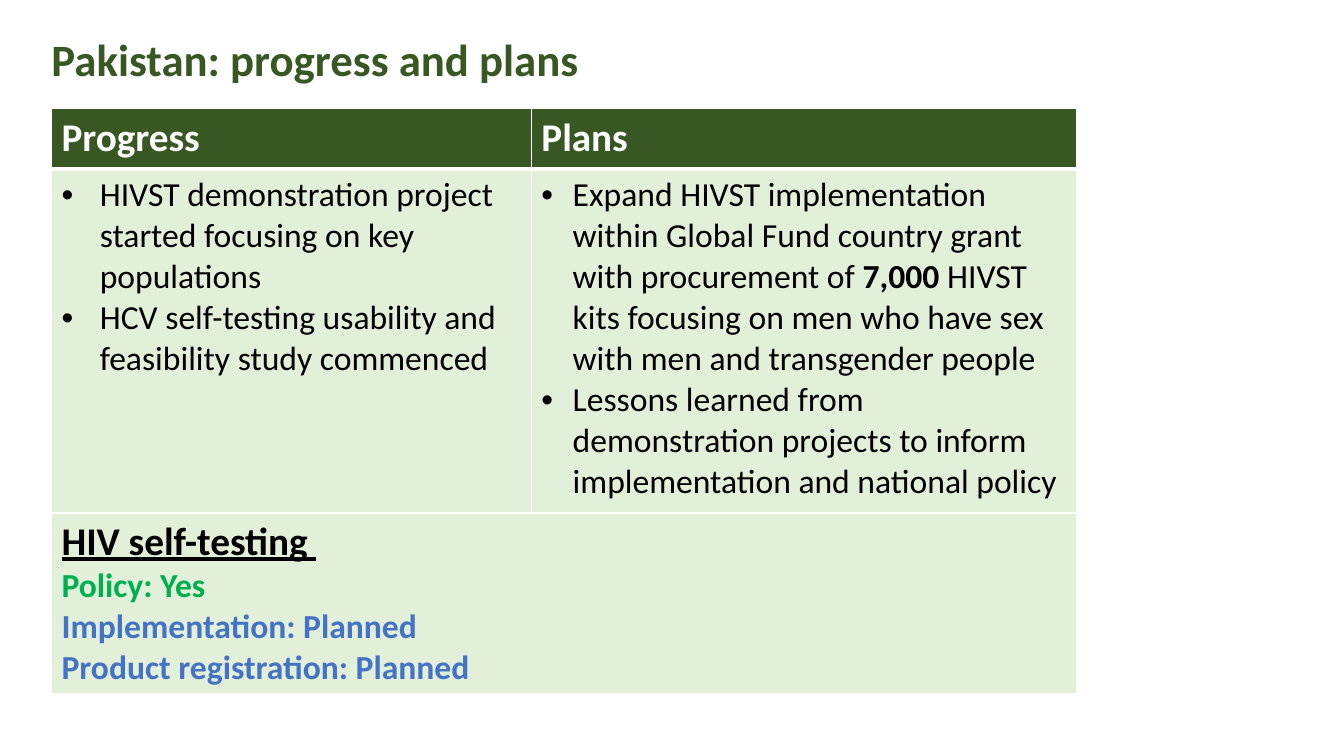
from dataclasses import dataclass

from lxml.etree import SubElement as Sub
from pptx import Presentation
from pptx.dml.color import RGBColor
from pptx.enum.text import MSO_ANCHOR as Anchor, MSO_AUTO_SIZE as Fit, PP_ALIGN as Align
from pptx.oxml.ns import qn
from pptx.util import Emu, Inches, Pt

WIDE, HIGH = Inches(13.33), Inches(7.5)
DARK, PALE, WHITE, BLACK = "385723", "E2F0D9", "FFFFFF", "000000"
GREEN, BLUE = "00B050", "4472C4"
COLS = (35.71, 40.59)
ROWS = (8, 45.47, 23.6)


@dataclass
class Run:
    text: str
    size: int = 24
    hue: str = BLACK
    bold: bool = False
    under: bool = False


@dataclass
class Para:
    runs: list[Run]
    hang: float = 0


@dataclass
class Cell:
    row: int
    col: int
    fill: str
    paras: list[Para]
    base: int = 1


def across(share: float) -> Emu:
    return Emu(round(WIDE * share / 100))


def down(share: float) -> Emu:
    return Emu(round(HIGH * share / 100))


def paint(target, hue: str) -> None:
    target.rgb = RGBColor.from_string(hue)


def place(shape, left: float, top: float, width: float, height: float) -> None:
    box = {"left": across(left), "top": down(top),
           "width": across(width), "height": down(height)}
    for key, value in box.items():
        setattr(shape, key, value)


def write(frame, paras: list[Para]) -> None:
    for i, para in enumerate(paras):
        line = frame.add_paragraph() if i else frame.paragraphs[0]
        line.alignment = Align.LEFT
        if para.hang:
            props = line._p.get_or_add_pPr()
            props.set("marL", str(Inches(para.hang)))
            props.set("indent", str(-Inches(para.hang)))
            Sub(props, qn("a:buFont"), typeface="Arial")
            Sub(props, qn("a:buChar"), char="•")
        for item in para.runs:
            run = line.add_run()
            run.text = item.text
            look = {"name": "Calibri", "size": Pt(item.size),
                    "bold": item.bold, "underline": item.under}
            for key, value in look.items():
                setattr(run.font, key, value)
            paint(run.font.color, item.hue)


def edge(cell, base: int) -> None:
    props = cell._tc.get_or_add_tcPr()
    for side, width in {"L": 1, "R": 1, "T": 1, "B": base}.items():
        line = Sub(props, qn(f"a:ln{side}"), w=str(Pt(width)))
        Sub(Sub(line, qn("a:solidFill")), qn("a:srgbClr"), val=WHITE)


def draw(table, item: Cell) -> None:
    cell = table.cell(item.row, item.col)
    edge(cell, item.base)
    cell.fill.solid()
    paint(cell.fill.fore_color, item.fill)
    write(cell.text_frame, item.paras)


def head(text: str) -> list[Para]:
    return [Para([Run(text, 28, WHITE, True)])]


CELLS = [
    Cell(0, 0, DARK, head("Progress"), 3),
    Cell(0, 1, DARK, head("Plans"), 3),
    Cell(1, 0, PALE, [
        Para([Run("HIVST demonstration project started focusing on key populations")], 0.38),
        Para([Run("HCV self-testing usability and feasibility study commenced")], 0.38),
    ]),
    Cell(1, 1, PALE, [
        Para([
            Run("Expand HIVST implementation within Global Fund country grant "
                "with procurement of "),
            Run("7,000", bold=True),
            Run(" HIVST kits focusing on men who have sex with men and transgender people"),
        ], 0.31),
        Para([Run("Lessons learned from demonstration projects to inform "
                  "implementation and national policy")], 0.31),
    ]),
    Cell(2, 0, PALE, [
        Para([Run("HIV self-testing ", 28, bold=True, under=True)]),
        Para([Run("Policy: Yes", hue=GREEN, bold=True)]),
        Para([Run("Implementation: Planned", hue=BLUE, bold=True)]),
        Para([Run("Product registration: Planned", hue=BLUE, bold=True)]),
    ]),
]


def main() -> None:
    deck = Presentation()
    deck.slide_width, deck.slide_height = WIDE, HIGH
    slide = deck.slides.add_slide(deck.slide_layouts[5])

    title = slide.shapes.title
    place(title, 3.08, 3.07, 86.27, 10.27)
    frame = title.text_frame
    for key, value in {"auto_size": Fit.NONE, "word_wrap": True,
                       "vertical_anchor": Anchor.MIDDLE}.items():
        setattr(frame, key, value)
    write(frame, [Para([Run("Pakistan: progress and plans", 32, DARK, True)])])
    frame.paragraphs[0].line_spacing = 0.9

    table = slide.shapes.add_table(
        len(ROWS), len(COLS), across(3.83), down(14.4),
        across(sum(COLS)), down(sum(ROWS))).table
    table.horz_banding = False
    for col, share in zip(table.columns, COLS):
        col.width = across(share)
    for row, share in zip(table.rows, ROWS):
        row.height = down(share)
    table.cell(2, 0).merge(table.cell(2, 1))
    for item in CELLS:
        draw(table, item)

    deck.save("out.pptx")


if __name__ == "__main__":
    main()
